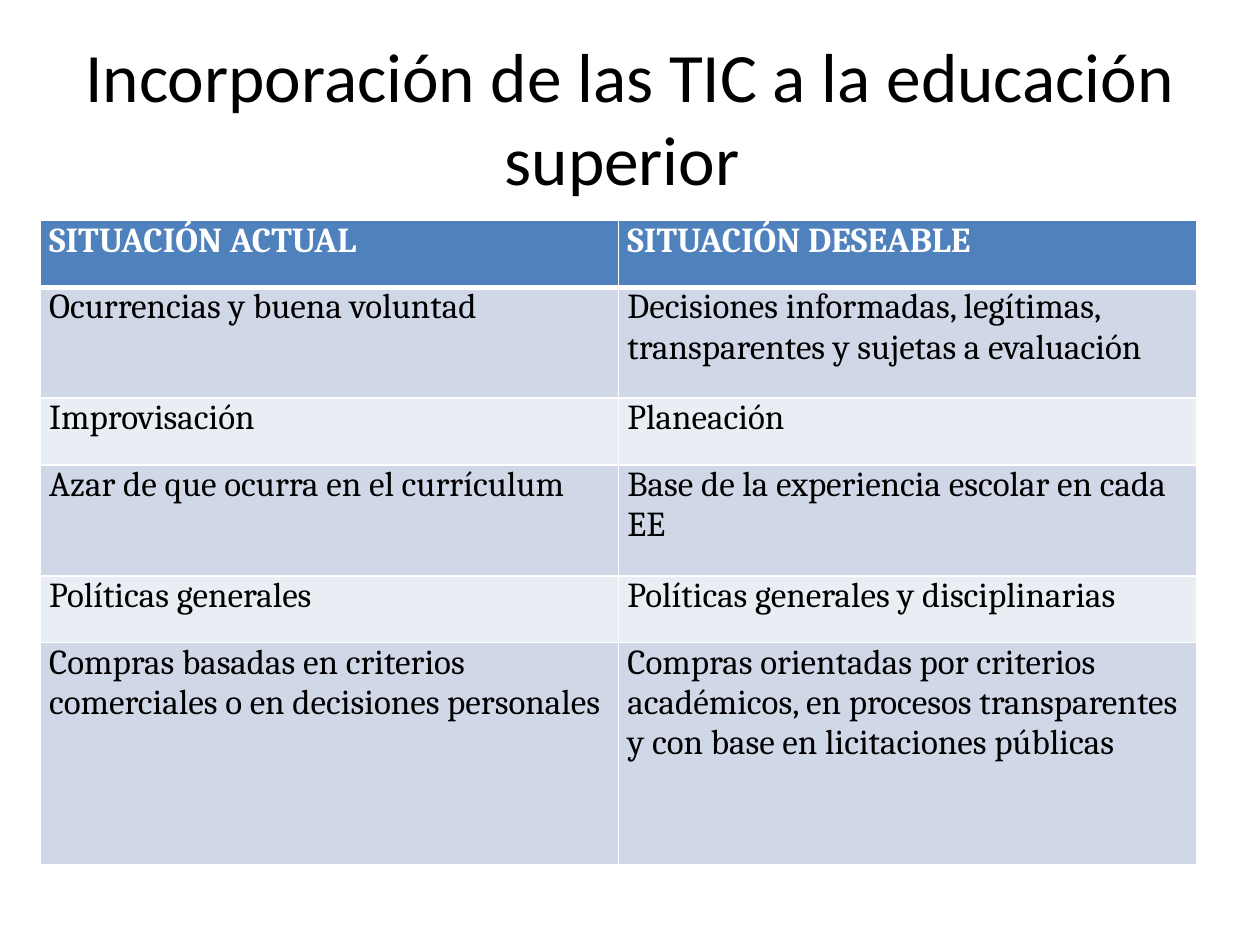
from dataclasses import dataclass

from lxml import etree
from pptx import Presentation
from pptx.dml.color import RGBColor
from pptx.enum import text
from pptx.oxml import ns
from pptx.util import Inches, Pt


@dataclass(frozen=True)
class Theme:
    title_font: str = "Calibri"
    table_font: str = "Cambria"
    title_size: float = 39.6
    table_size: float = 20
    ink: str = "000000"
    white: str = "FFFFFF"
    header: str = "4F81BD"
    bands: tuple = ("D0D8E8", "E9EDF4")
    border: float = 1
    header_border: float = 3


THEME = Theme()
TITLE = "Incorporación de las TIC a la educación superior "
ROWS = [
    (0.53, "SITUACIÓN ACTUAL", "SITUACIÓN DESEABLE"),
    (0.88, "Ocurrencias y buena voluntad",
     "Decisiones informadas, legítimas, transparentes y sujetas a evaluación"),
    (0.53, "Improvisación", "Planeación"),
    (0.88, "Azar de que ocurra en el currículum",
     "Base de la experiencia escolar en cada EE"),
    (0.53, "Políticas generales", "Políticas generales y disciplinarias"),
    (1.76, "Compras basadas en criterios comerciales o en decisiones personales",
     "Compras orientadas por criterios académicos, en procesos transparentes "
     "y con base en licitaciones públicas"),
]


def style_text(para, font, size, color, bold=False):
    for span in para.runs:
        span.font.name = font
        span.font.size = Pt(size)
        span.font.bold = bold
        span.font.color.rgb = RGBColor.from_string(color)


def add_title(page):
    box = page.shapes.add_textbox(Inches(0.5), Inches(0.3), Inches(9), Inches(1.25))
    frame = box.text_frame
    frame.word_wrap = True
    frame.vertical_anchor = text.MSO_ANCHOR.MIDDLE
    frame.text = TITLE
    para = frame.paragraphs[0]
    para.alignment = text.PP_ALIGN.CENTER
    style_text(para, THEME.title_font, THEME.title_size, THEME.ink)


def set_borders(cell, top, bottom):
    properties = cell._tc.get_or_add_tcPr()
    widths = {"lnL": THEME.border, "lnR": THEME.border, "lnT": top, "lnB": bottom}
    for side, width in widths.items():
        line = etree.SubElement(properties, ns.qn(f"a:{side}"), w=str(Pt(width)))
        fill = etree.SubElement(line, ns.qn("a:solidFill"))
        etree.SubElement(fill, ns.qn("a:srgbClr"), val=THEME.white)


def fill_cell(cell, words, row):
    is_header = row == 0
    top = THEME.header_border if row == 1 else THEME.border
    bottom = THEME.header_border if is_header else THEME.border
    set_borders(cell, top, bottom)
    cell.fill.solid()
    color = THEME.header if is_header else THEME.bands[(row - 1) % 2]
    cell.fill.fore_color.rgb = RGBColor.from_string(color)
    cell.margin_left = cell.margin_right = Inches(0.07)
    cell.margin_top = cell.margin_bottom = 0
    cell.text_frame.text = words
    ink = THEME.white if is_header else THEME.ink
    style_text(cell.text_frame.paragraphs[0], THEME.table_font,
               THEME.table_size, ink, is_header)


def add_comparison(page):
    height = sum(row[0] for row in ROWS)
    table = page.shapes.add_table(len(ROWS), 2, Inches(0.32), Inches(1.75),
                                  Inches(9.18), Inches(height)).table
    for index, (row_height, *entries) in enumerate(ROWS):
        table.rows[index].height = Inches(row_height)
        for column, words in enumerate(entries):
            fill_cell(table.cell(index, column), words, index)


def main():
    deck = Presentation()
    deck.slide_width, deck.slide_height = Inches(10), Inches(7.5)
    page = deck.slides.add_slide(deck.slide_layouts[6])
    add_title(page)
    add_comparison(page)
    deck.save("out.pptx")


if __name__ == "__main__":
    main()
